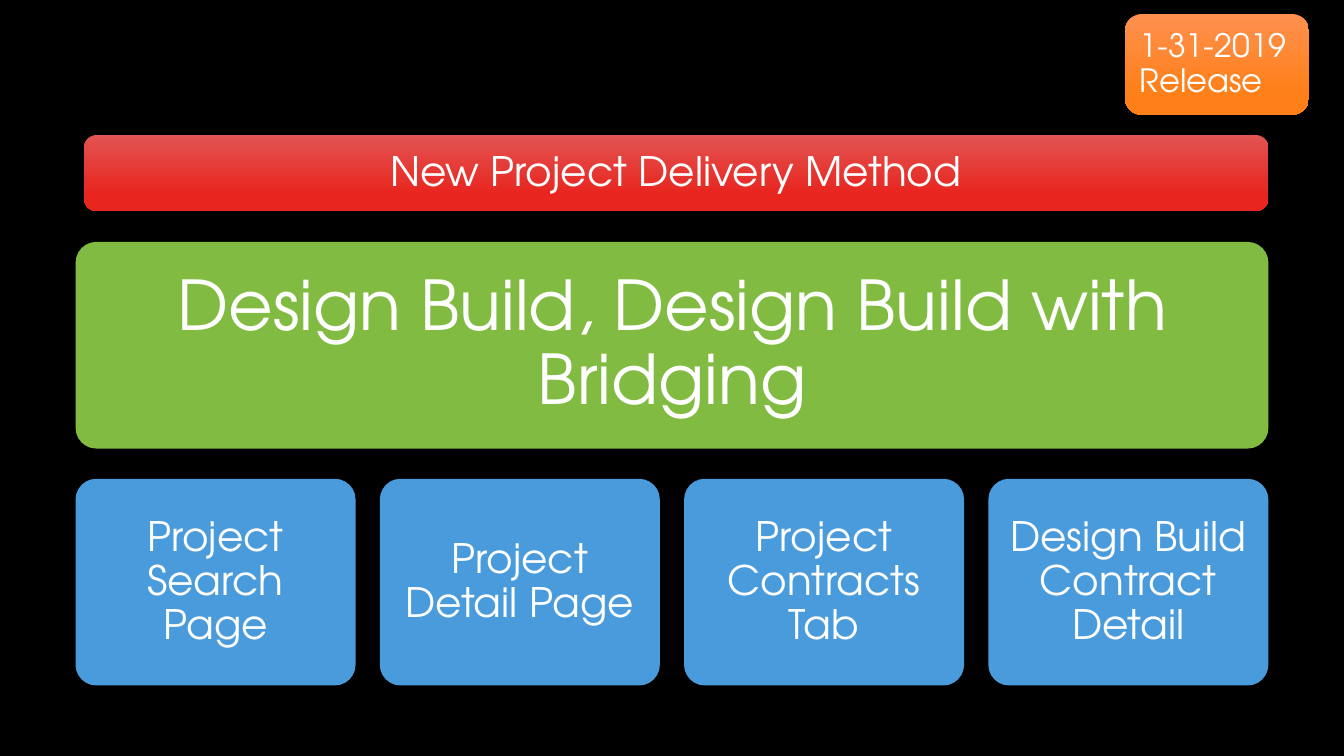
from pptx import Presentation
from pptx.dml.color import RGBColor
from pptx.enum.shapes import MSO_SHAPE
from pptx.enum.text import MSO_ANCHOR, PP_ALIGN
from pptx.util import Pt

ROUND_RECT = MSO_SHAPE.ROUNDED_RECTANGLE
MIDDLE = MSO_ANCHOR.MIDDLE
LEFT, CENTER = PP_ALIGN.LEFT, PP_ALIGN.CENTER

FONT = "TeX Gyre Adventor"
COLORS = {
    "background": "000000",
    "text": "FFFFFF",
    "orange_top": "FE904F",
    "orange_bottom": "FF8019",
    "red_top": "E25452",
    "red_bottom": "E8251F",
    "green": "81BB42",
    "blue": "4A9BDC",
}

# Content area shared by the green panel and the row of cards
AREA_LEFT, AREA_WIDTH = 54, 852
BLOCK_HEIGHT = 147.6
CARD_TOP, CARD_WIDTH = 342, 200
CARDS = [
    "Project Search Page",
    "Project Detail Page",
    "Project Contracts Tab",
    "Design Build Contract Detail",
]


def rgb(name):
    return RGBColor.from_string(COLORS[name])


def fill_shape(sp, *names):
    """One colour gives a solid fill, two a top-to-bottom gradient."""
    if len(names) == 1:
        sp.fill.solid()
        sp.fill.fore_color.rgb = rgb(names[0])
        return
    sp.fill.gradient()
    sp.fill.gradient_angle = 270
    for stop, name, position in zip(sp.fill.gradient_stops, names, (0, 0.78)):
        stop.color.rgb = rgb(name)
        stop.position = position


def add_block(s, box, colors, lines, size, inset, align=CENTER, corner=0.1):
    sp = s.shapes.add_shape(ROUND_RECT, *(Pt(v) for v in box))
    sp.adjustments[0] = corner
    sp.shadow.inherit = False
    sp.line.fill.background()
    fill_shape(sp, *colors)

    tf = sp.text_frame
    tf.word_wrap = True
    tf.vertical_anchor = MIDDLE
    tf.margin_left = tf.margin_right = Pt(inset)
    tf.margin_top = tf.margin_bottom = Pt(inset)

    p = tf.paragraphs[0]
    p.alignment = align
    p.line_spacing = 0.9
    for i, line in enumerate(lines):
        if i:
            p.add_line_break()
        r = p.add_run()
        r.text = line
        r.font.name = FONT
        r.font.size = Pt(size)
        r.font.color.rgb = rgb("text")


def main():
    prs = Presentation()
    prs.slide_width, prs.slide_height = Pt(960), Pt(540)
    s = prs.slides.add_slide(prs.slide_layouts[6])
    s.background.fill.solid()
    s.background.fill.fore_color.rgb = rgb("background")

    # Release badge
    add_block(s, (803.5, 10, 131.5, 72), ("orange_top", "orange_bottom"),
              ["1-31-2019", "Release"], 23, 7, LEFT, 0.167)

    # Main panel
    add_block(s, (AREA_LEFT, 172.8, AREA_WIDTH, BLOCK_HEIGHT), ("green",),
              ["Design Build, Design Build with Bridging"], 49, 14.4)

    # Row of cards, spread evenly over the content area
    pitch = (AREA_WIDTH - CARD_WIDTH) / (len(CARDS) - 1)
    for i, label in enumerate(CARDS):
        add_block(s, (AREA_LEFT + i * pitch, CARD_TOP, CARD_WIDTH, BLOCK_HEIGHT),
                  ("blue",), [label], 29, 8.6)

    # Title banner
    add_block(s, (60, 96.4, 846, 54.4), ("red_top", "red_bottom"),
              ["New Project Delivery Method"], 29, 8.6, corner=0.167)

    prs.save("out.pptx")


if __name__ == "__main__":
    main()
